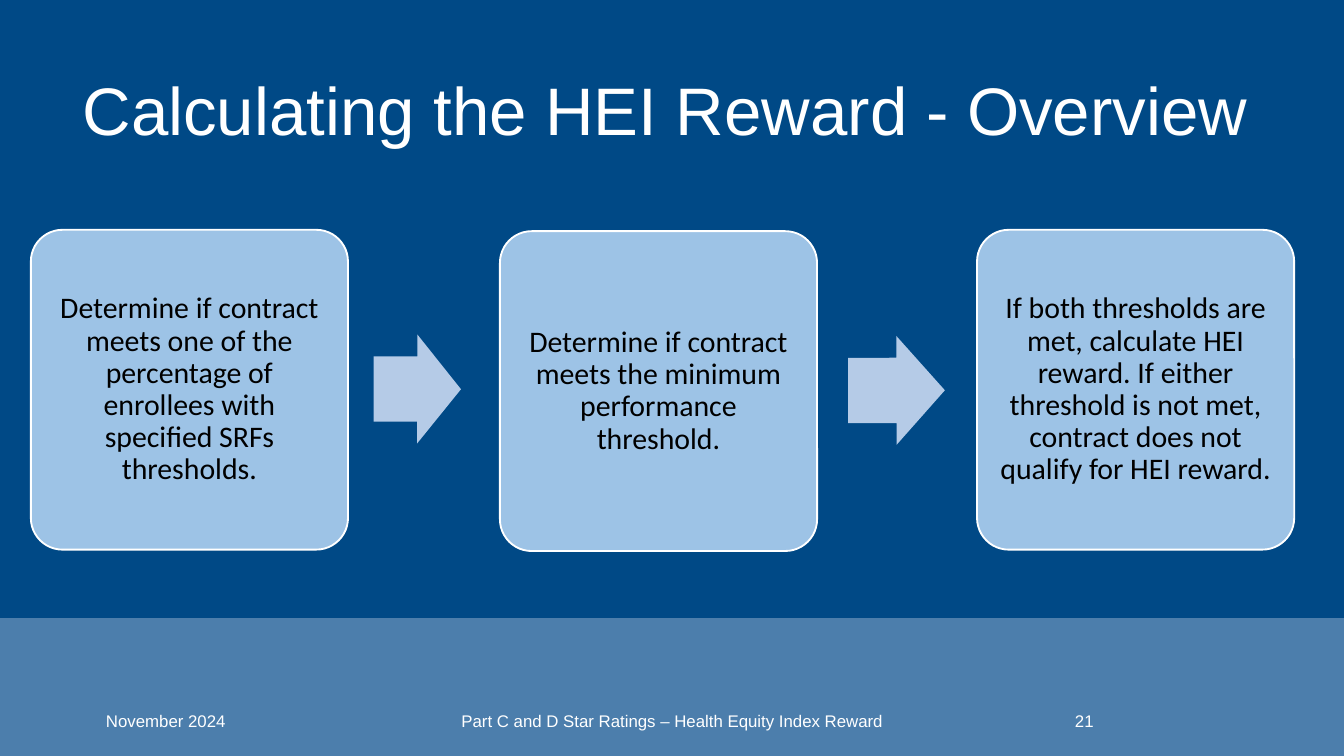
from pptx import Presentation
from pptx.dml.color import RGBColor
from pptx.enum.shapes import MSO_SHAPE
from pptx.enum.text import MSO_ANCHOR, PP_ALIGN
from pptx.util import Inches, Pt
from lxml.etree import SubElement
from pptx.oxml.ns import qn

# Content
TITLE = "Calculating the HEI Reward - Overview"
STEPS = [  # left, top, text
    (0.23, 1.71, "Determine if contract meets one of the percentage of "
                 "enrollees with specified SRFs thresholds."),
    (3.72, 1.72, "Determine if contract meets the minimum performance threshold."),
    (7.27, 1.71, "If both thresholds are met, calculate HEI reward. If either "
                 "threshold is not met, contract does not qualify for HEI reward."),
]
ARROWS = [(2.78, 2.49, 0.65, 0.2), (6.31, 2.5, 0.72, -0.1)]  # left, top, width, turn
FOOTER = [  # left, width, text, align
    (0.69, 2.25, "November 2024", PP_ALIGN.LEFT),
    (3.31, 3.38, "Part C and D Star Ratings – Health Equity Index Reward", PP_ALIGN.CENTER),
    (7.9, 0.38, "21", PP_ALIGN.LEFT),
]

NAVY = RGBColor(0x00, 0x49, 0x86)
PALE = RGBColor(0xDA, 0xE3, 0xF3)
SKY = RGBColor(0x9D, 0xC3, 0xE6)
MIST = RGBColor(0xB5, 0xCB, 0xE7)
WHITE = RGBColor(0xFF, 0xFF, 0xFF)
BLACK = RGBColor(0x00, 0x00, 0x00)
WIDE = 10
HIGH = WIDE * 9 / 16
BAND = 4.6

deck = Presentation()
deck.slide_width, deck.slide_height = Inches(WIDE), Inches(HIGH)
slide = deck.slides.add_slide(deck.slide_layouts[6])


def add_form(kind, left, top, width, height, fill, line=None):
    form = slide.shapes.add_shape(kind, *map(Inches, (left, top, width, height)))
    form.shadow.inherit = False
    form.fill.solid()
    form.fill.fore_color.rgb = fill
    if line is None:
        form.line.fill.background()
    else:
        form.line.color.rgb = line
        form.line.width = Pt(1)
    return form


def add_text(box, text, size=9, font="Arial", color=WHITE,
             align=PP_ALIGN.CENTER, space=1.0, inset=None):
    frame = box.text_frame
    frame.word_wrap = True
    frame.vertical_anchor = MSO_ANCHOR.MIDDLE
    if inset is not None:
        frame.margin_left = frame.margin_right = Inches(inset)
        frame.margin_top = frame.margin_bottom = Inches(inset)
    para = frame.paragraphs[0]
    para.alignment = align
    para.line_spacing = space
    run = para.add_run()
    run.text = text
    run.font.size = Pt(size)
    run.font.name = font
    run.font.color.rgb = color


def add_box(left, top, width, height):
    return slide.shapes.add_textbox(*map(Inches, (left, top, width, height)))


# Backdrop and see-through footer band
add_form(MSO_SHAPE.RECTANGLE, 0, 0, WIDE, HIGH, NAVY)
band = add_form(MSO_SHAPE.RECTANGLE, 0, BAND, WIDE, HIGH - BAND, PALE)
tint = next(band.fill._xPr.iter(qn("a:srgbClr")))
SubElement(tint, qn("a:alpha"), val="35000")

# Title
add_text(add_box(0.43, 0.3, 9.04, 1.09), TITLE, size=36, space=0.9)

# Steps
for left, top, text in STEPS:
    card = add_form(MSO_SHAPE.ROUNDED_RECTANGLE, left, top, 2.36, 2.38, SKY, WHITE)
    card.adjustments[0] = 0.1
    add_text(card, text, size=16, font="Calibri", color=BLACK, space=0.9, inset=0.07)

# Arrows between steps
for left, top, width, turn in ARROWS:
    arrow = add_form(MSO_SHAPE.RIGHT_ARROW, left, top, width, 0.81, MIST)
    arrow.adjustments[0], arrow.adjustments[1] = 0.6, 0.5
    arrow.rotation = turn

# Footer
for left, width, text, align in FOOTER:
    add_text(add_box(left, 5.21, width, 0.3), text, align=align)

deck.save("out.pptx")
